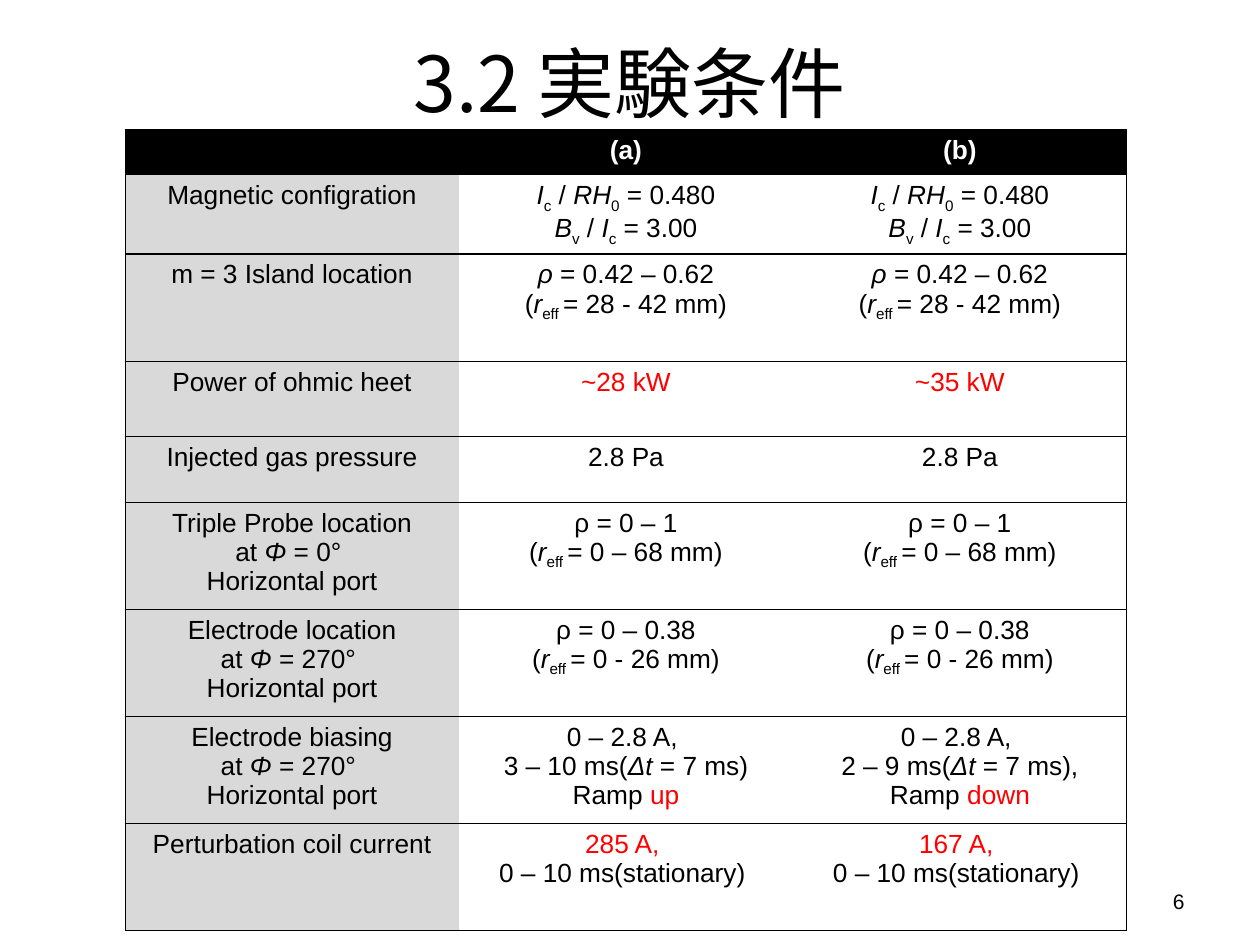
import copy

import lxml.etree
import pptx
import pptx.dml.color
import pptx.enum.text
import pptx.oxml.ns
import pptx.util

ALIGN = pptx.enum.text.PP_ALIGN
MIDDLE = pptx.enum.text.MSO_ANCHOR.MIDDLE
BLACK, WHITE, GREY, RED = "000000", "FFFFFF", "D9D9D9", "FF0000"


def paint(value):
    return pptx.dml.color.RGBColor.from_string(value)


def sub(parent, tag, **attrs):
    return lxml.etree.SubElement(parent, pptx.oxml.ns.qn(tag), attrs)


class Deck:
    """Style and current slide; places are percent shares of the slide's size."""

    font, size = "Arial", 15

    def __init__(self):
        self.prs = pptx.Presentation()
        self.prs.slide_width = pptx.util.Inches(10)
        self.prs.slide_height = pptx.util.Inches(7.5)
        self.slide = self.prs.slides.add_slide(self.prs.slide_layouts[5])

    def box(self, x, y, w, h):
        wide, high = self.prs.slide_width / 100, self.prs.slide_height / 100
        return int(x * wide), int(y * high), int(w * wide), int(h * high)

    def run(self, para, text, size, color=BLACK, bold=False, marks=""):
        run = para.add_run()
        run.text = text
        font = run.font
        font.name, font.size, font.bold = self.font, pptx.util.Pt(size), bold
        font.italic = "*" in marks
        font.color.rgb = paint(RED if "^" in marks else color)
        if "_" in marks:
            run._r.get_or_add_rPr().set("baseline", "-25000")
        return run

    def rich(self, frame, text, **style):
        """* italic, _ subscript, ^ red; | breaks a line, newline a paragraph."""
        for num, line in enumerate(text.split("\n")):
            para = frame.paragraphs[0] if num == 0 else frame.add_paragraph()
            para.alignment = ALIGN.CENTER
            marks, part, run = set(), "", None
            for char in line + "|":
                if char not in "*_^|":
                    part += char
                    continue
                if part:
                    run = self.run(para, part, self.size, marks=marks, **style)
                    part = ""
                if char != "|":
                    marks ^= {char}
                else:
                    para.add_line_break()
                    para._p[-1].append(copy.deepcopy(run._r.rPr))
            para._p.remove(para._p[-1])

    def title(self, text, place, face, size):
        shape = self.slide.shapes.title
        shape.left, shape.top, shape.width, shape.height = self.box(*place)
        frame = shape.text_frame
        frame.vertical_anchor = MIDDLE
        para = frame.paragraphs[0]
        para.alignment = ALIGN.CENTER
        run = self.run(para, text, size)
        run.font.name = face
        sub(run._r.rPr, "a:ea", typeface=face)

    def label(self, text, place, size):
        frame = self.slide.shapes.add_textbox(*self.box(*place)).text_frame
        frame.word_wrap, frame.vertical_anchor = True, MIDDLE
        frame.paragraphs[0].alignment = ALIGN.RIGHT
        self.run(frame.paragraphs[0], text, size)

    def border(self, cell, sides):
        props = cell._tc.get_or_add_tcPr()
        for side in "LRTB":
            line = sub(props, "a:ln" + side, w=str(pptx.util.Pt(0.75)))
            if side in sides:
                sub(sub(line, "a:solidFill"), "a:srgbClr", val=BLACK)
            else:
                sub(line, "a:noFill")

    def table(self, rows, highs, place):
        cols = len(rows[0])
        shape = self.slide.shapes.add_table(len(rows), cols, *self.box(*place))
        grid = shape.table
        grid.first_row = grid.horz_banding = False
        for row, high in zip(grid.rows, highs):
            row.height = pptx.util.Inches(high)
        for r, texts in enumerate(rows):
            for c, text in enumerate(texts):
                cell, head = grid.cell(r, c), r == 0
                self.border(cell, "TB" + {0: "L", cols - 1: "R"}.get(c, ""))
                cell.fill.solid()
                cell.fill.fore_color.rgb = paint(
                    BLACK if head else GREY if c == 0 else WHITE)
                if text:
                    self.rich(cell.text_frame, text, bold=head,
                              color=WHITE if head else BLACK)
                else:
                    para = cell.text_frame.paragraphs[0]
                    sub(para._p, "a:endParaRPr", sz=str(self.size * 100))


# Conditions shared by both cases
field = "*I*_c_ / *RH*_0_ = 0.480|*B*_v_ / *I*_c_ = 3.00"
island = "*ρ* = 0.42 – 0.62\n(*r*_eff _= 28 - 42 mm)"
probe = "ρ = 0 – 1\n(*r*_eff _= 0 – 68 mm)"
rod = "ρ = 0 – 0.38|(*r*_eff _= 0 - 26 mm)"
port = "\nat *Φ* = {}° |Horizontal port"
bias = "0 – 2.8 A, |{} ms(*Δt* = 7 ms){} Ramp ^{}^"
coil = "^{} A, ^|0 – 10 ms(stationary) "

rows = [
    ("", "(a)", "(b)"),
    ("Magnetic configration", field, field),
    ("m = 3 Island location", island, island),
    ("Power of ohmic heet", "^~28 kW^", "^~35 kW^"),
    ("Injected gas pressure", "2.8 Pa", "2.8 Pa"),
    ("Triple Probe location" + port.format(0), probe, probe),
    ("Electrode location" + port.format(270), rod, rod),
    ("Electrode biasing" + port.format(270),
     bias.format("3 – 10", "", "up"), bias.format("2 – 9", ",", "down")),
    ("Perturbation coil current", coil.format(285), coil.format(167)),
]
highs = [0.32, 0.62, 0.85, 0.6, 0.52] + [0.85] * 4

deck = Deck()
# Title
deck.title("3.2 実験条件", (5, 0.27, 90, 16.67), "Noto Sans CJK JP", 44)
# Table of conditions
deck.table(rows, highs, (9.93, 13.73, 79.5, 84))
# Page number
deck.label("6", (71.7, 92.67, 23.3, 5.33), 12)
deck.prs.save("out.pptx")
